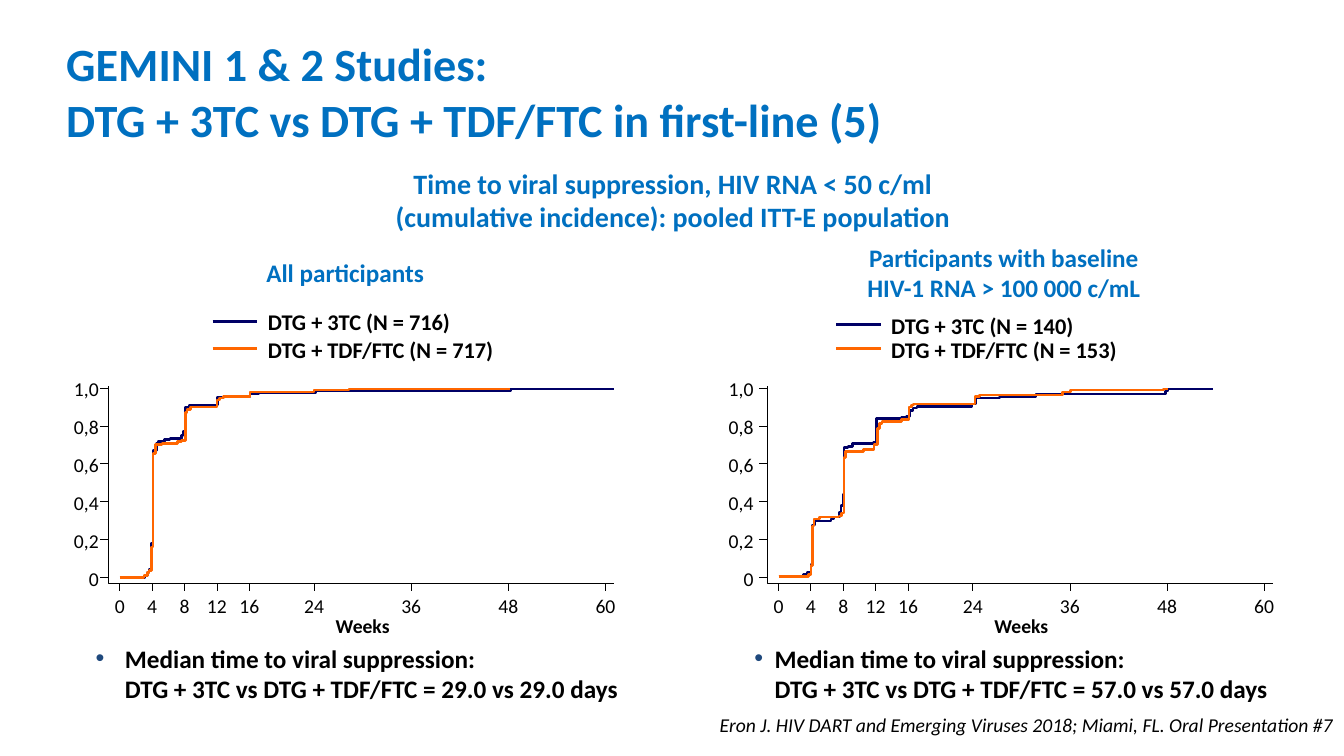
from dataclasses import dataclass

from lxml import etree
from pptx import Presentation
from pptx.dml.color import RGBColor
from pptx.enum.text import MSO_ANCHOR, PP_ALIGN
from pptx.oxml.ns import qn
from pptx.util import Cm, Pt

BLUE = RGBColor(0x00, 0x70, 0xC0)
NAVY = RGBColor(0x00, 0x00, 0x66)
ORANGE = RGBColor(0xFF, 0x66, 0x00)
BLACK = RGBColor(0, 0, 0)
BULLET_HEX = "1F497D"

AXIS_WIDTH, AXIS_HEIGHT = 12.73, 4.98
AXIS_TOP = 9.73
AXIS_BOTTOM = AXIS_TOP + AXIS_HEIGHT
WEEK_ZERO, WEEK_SPAN = 0.28, 12.24
LEVEL_ZERO, LEVEL_SPAN = AXIS_BOTTOM - 0.16, 4.77
WEEK_TICKS = (0, 4, 8, 12, 16, 24, 36, 48, 60)
LEVEL_TICKS = {0: "0", 20: "0,2", 40: "0,4", 60: "0,6", 80: "0,8", 100: "1,0"}
LABEL_HEIGHT = 0.86


@dataclass
class Curve:
    """Step curve: (week, percent suppressed from then on) and its last week."""
    name: str
    color: RGBColor
    steps: list
    last_week: float


@dataclass
class Panel:
    """Content of one half of the slide."""
    left: float
    heading: str
    legend_left: float
    legend_rows: tuple
    label_gap: float
    indent: float
    result: str
    curves: list


ALL_3TC = Curve("DTG + 3TC (N = 716)", NAVY, [
    (0, 0), (3.1, 1.1), (3.4, 2.7), (3.6, 4.3), (3.9, 18.1), (4.1, 67), (4.5, 70.7),
    (4.7, 71.8), (5.5, 72.9), (6.2, 73.4), (7.6, 75), (7.8, 77.1), (8.1, 89.9),
    (8.6, 91), (12.1, 95.2), (16.1, 96.8), (17.1, 97.3), (24.2, 98.4), (48.3, 99.5)], 61)
ALL_FTC = Curve("DTG + TDF/FTC (N = 717)", ORANGE, [
    (0, 0), (3, 1.1), (3.4, 2.7), (3.6, 3.7), (3.9, 16), (4.1, 65.4), (4.4, 70.2),
    (5.2, 70.7), (7.1, 71.8), (7.6, 72.3), (8.1, 87.2), (8.3, 88.8), (8.7, 89.9),
    (12, 93.6), (12.3, 94.7), (12.8, 95.7), (16.1, 97.9), (24, 98.9), (28.3, 99.5)], 48.2)
HIGH_3TC = Curve("DTG + 3TC (N = 140)", NAVY, [
    (0, 0.5), (3.1, 1.6), (3.5, 2.7), (4, 6.9), (4.2, 27.7), (4.5, 29.8), (6.5, 30.9),
    (6.8, 31.9), (7.5, 34.6), (7.7, 37.8), (8, 44.1), (8.1, 68.6), (8.6, 69.1),
    (9.1, 70.7), (11.7, 71.3), (12.1, 84), (15.2, 84.6), (15.8, 85.1), (16.2, 88.3),
    (16.6, 89.4), (17.1, 90.4), (23.9, 91.5), (24.3, 94.7), (27.3, 95.2), (28, 95.7),
    (31.8, 96.8), (47.8, 98.4), (48.1, 99.5)], 53.7)
HIGH_FTC = Curve("DTG + TDF/FTC (N = 153)", ORANGE, [
    (0, 0.5), (3.7, 1.6), (4, 6.4), (4.2, 27.1), (4.4, 30.9), (5.1, 31.9), (7.5, 32.4),
    (7.8, 34), (8.1, 63.3), (8.3, 66.5), (10.5, 67.6), (11.8, 70.2), (12.2, 78.7),
    (12.5, 81.4), (12.8, 82.4), (15.2, 83.5), (16.1, 89.9), (16.4, 91), (16.7, 91.5),
    (24.3, 95.7), (24.8, 96.3), (35.1, 97.9), (36.1, 98.9), (47.6, 99.5)], 48.1)

PANELS = [
    Panel(2.74, "All participants", 3.76, (8.1, 8.79), 0, 0.74,
          "DTG + 3TC vs DTG + TDF/FTC = 29.0 vs 29.0 days", [ALL_3TC, ALL_FTC]),
    Panel(19.34, "Participants with baseline\vHIV-1 RNA > 100 000 c/mL", 2.87,
          (8.18, 8.79), 0.1, 0.51,
          "DTG + 3TC vs DTG + TDF/FTC = 57.0 vs 57.0 days", [HIGH_3TC, HIGH_FTC]),
]


def add_text(shapes, box, text, size, color=BLACK, align=PP_ALIGN.LEFT,
             anchor=MSO_ANCHOR.TOP, indent=0, **styles):
    """Add a text box, given as left, top, width, height in cm; indent adds a bullet."""
    frame = shapes.add_textbox(*map(Cm, box)).text_frame
    frame.word_wrap = True
    frame.vertical_anchor = anchor
    para = frame.paragraphs[0]
    para.text = text
    para.alignment = align
    if indent:
        settings = para._p.get_or_add_pPr()
        settings.set("marL", str(Cm(indent)))
        settings.set("indent", str(-Cm(indent)))
        bullet_color = etree.SubElement(settings, qn("a:buClr"))
        etree.SubElement(bullet_color, qn("a:srgbClr"), val=BULLET_HEX)
        etree.SubElement(settings, qn("a:buFont"), typeface="Arial")
        etree.SubElement(settings, qn("a:buChar"), char="•")
    for span in para.runs:
        span.font.color.rgb = color
        for name, value in {"name": "Calibri", "size": Pt(size), **styles}.items():
            setattr(span.font, name, value)
    return para


def add_line(shapes, start, end, color=BLACK, width=0.63):
    """Draw a straight line between two points in cm."""
    line = shapes.add_connector(1, *map(Cm, (*start, *end)))
    line.line.color.rgb = color
    line.line.width = Pt(width)
    etree.SubElement(line._element.spPr, qn("a:effectLst"))


def add_outline(shapes, points, color=BLACK, width=0.63):
    """Draw an open, unfilled path through points in cm."""
    start, *others = [(Cm(x), Cm(y)) for x, y in points]
    builder = shapes.build_freeform(*start)
    builder.add_line_segments(others, close=False)
    outline = builder.convert_to_shape()
    outline.fill.background()
    outline.shadow.inherit = False
    outline.line.color.rgb = color
    outline.line.width = Pt(width)


def week_x(left, week):
    """Return the horizontal place of a week."""
    return left + WEEK_ZERO + week / 60 * WEEK_SPAN


def level_y(level):
    """Return the vertical place of a percentage."""
    return LEVEL_ZERO - level / 100 * LEVEL_SPAN


def add_axes(shapes, left, label_gap):
    """Draw both axes with their ticks and labels."""
    add_outline(shapes, [(left + AXIS_WIDTH, AXIS_BOTTOM), (left, AXIS_BOTTOM), (left, AXIS_TOP)])
    for week in WEEK_TICKS:
        x = week_x(left, week)
        add_line(shapes, (x, AXIS_BOTTOM + 0.18), (x, AXIS_BOTTOM))
        add_text(shapes, (x - 0.65, AXIS_BOTTOM + 0.12, 1.3, LABEL_HEIGHT), str(week), 14,
                 align=PP_ALIGN.CENTER)
    for level, label in LEVEL_TICKS.items():
        y = level_y(level)
        add_line(shapes, (left - 0.21, y), (left, y))
        add_text(shapes, (left - label_gap - 1.5, y - 0.4, 1.5, LABEL_HEIGHT), label, 14,
                 align=PP_ALIGN.RIGHT)
    add_text(shapes, (left + 5.2, AXIS_BOTTOM + 0.63, 2.4, LABEL_HEIGHT), "Weeks", 14,
             align=PP_ALIGN.CENTER, bold=True)


def add_curve(shapes, left, curve):
    """Draw one cumulative incidence curve as steps."""
    points = []
    next_weeks = [week for week, _ in curve.steps[1:]] + [curve.last_week]
    for (week, level), next_week in zip(curve.steps, next_weeks):
        points += [(week_x(left, week), level_y(level)), (week_x(left, next_week), level_y(level))]
    add_outline(shapes, points, curve.color, 1.88)


def add_panel(page, panel):
    """Place heading, plot, legend and result of one population."""
    left = panel.left
    add_text(page.shapes, (left + 2.2, 5.85, 7.52, 2.03), panel.heading, 18, BLUE,
             PP_ALIGN.CENTER, MSO_ANCHOR.MIDDLE, bold=True)
    plot = page.shapes.add_group_shape().shapes
    add_axes(plot, left, panel.label_gap)
    legend_x = left + panel.legend_left
    for curve, y in zip(panel.curves, panel.legend_rows):
        add_curve(plot, left, curve)
        add_line(plot, (legend_x - 1.14, y), (legend_x - 0.02, y), curve.color, 1.88)
        add_text(plot, (legend_x, y - 0.45, 7, 0.94), curve.name, 16, bold=True)
    add_text(page.shapes, (left - 0.58, 16.08, 14.2, 1.8),
             "Median time to viral suppression:\v" + panel.result, 18,
             indent=panel.indent, bold=True)


def add_titles(page):
    """Place the title, the subtitle and the reference."""
    add_text(page.shapes, (1.42, 0.71, 23.8, 3.18),
             "GEMINI 1 & 2 Studies:\vDTG + 3TC vs DTG + TDF/FTC in first-line (5)",
             33, BLUE, anchor=MSO_ANCHOR.MIDDLE, bold=True)
    add_text(page.shapes, (9.13, 4.06, 15.66, 1.96),
             "Time to viral suppression, HIV RNA < 50 c/ml\v"
             "(cumulative incidence): pooled ITT-E population",
             20, BLUE, PP_ALIGN.CENTER, bold=True)
    reference = add_text(page.shapes, (17.2, 17.91, 16.66, 0.79),
                         "Eron J. HIV DART and Emerging Viruses 2018; Miami, FL. "
                         "Oral Presentation #7",
                         14, align=PP_ALIGN.RIGHT, anchor=MSO_ANCHOR.BOTTOM, italic=True)
    reference.line_spacing = 0.9


def main():
    """Build the slide and save it."""
    deck = Presentation()
    deck.slide_width, deck.slide_height = Cm(33.87), Cm(19.05)
    page = deck.slides.add_slide(deck.slide_layouts[6])
    for panel in PANELS:
        add_panel(page, panel)
    add_titles(page)
    deck.save("out.pptx")


if __name__ == "__main__":
    main()
